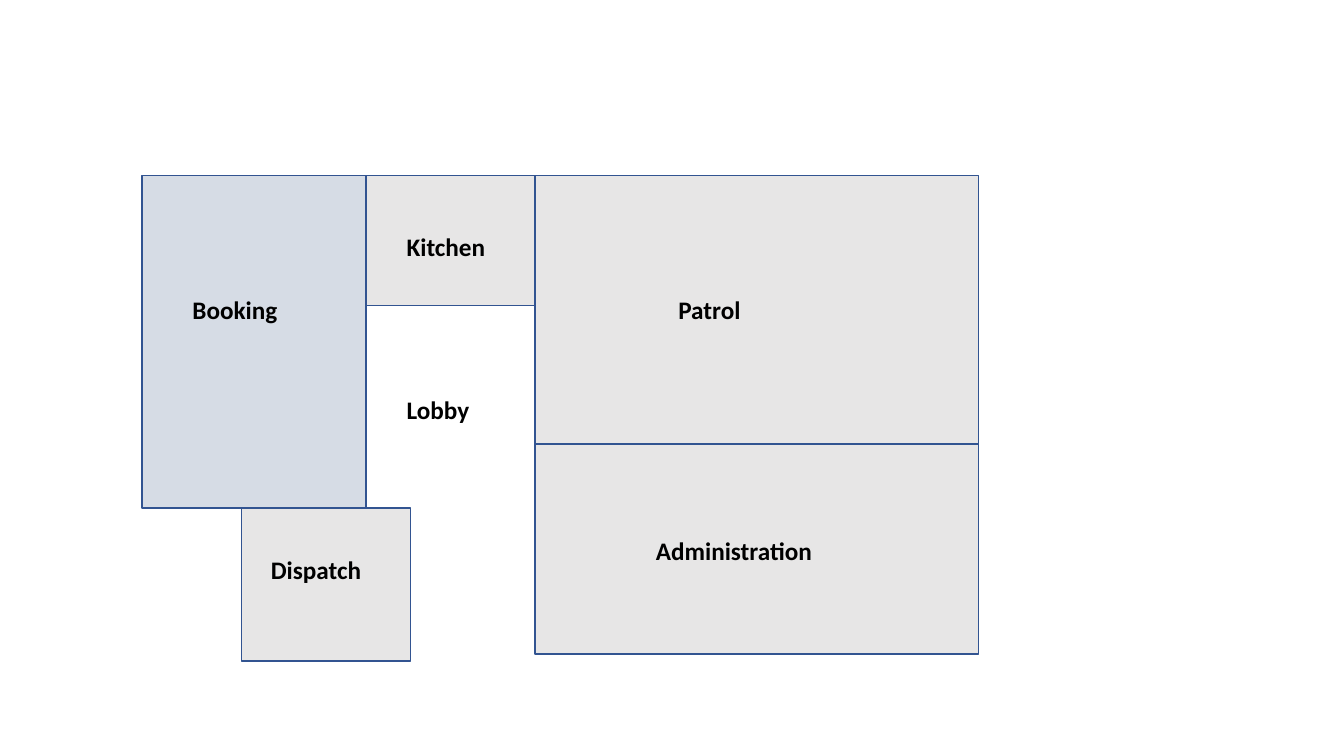
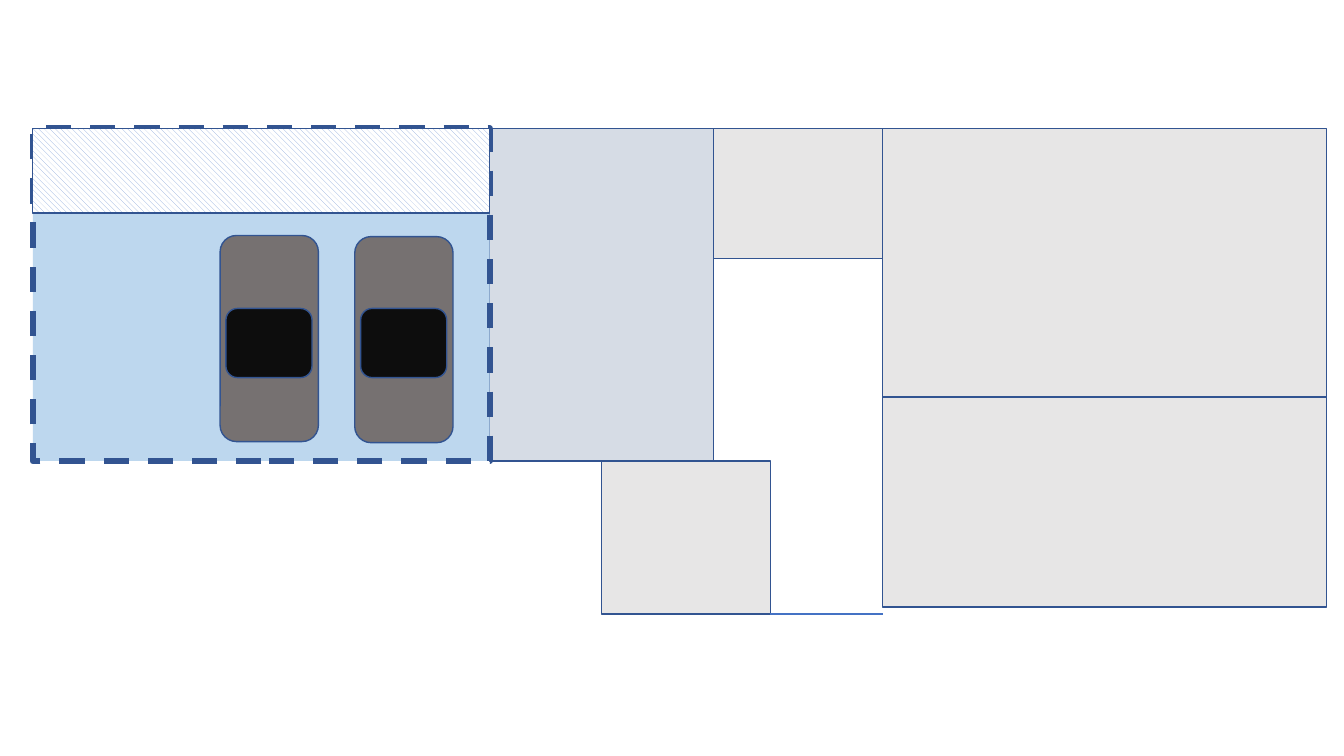
from dataclasses import dataclass

from lxml.etree import SubElement
from pptx import Presentation
from pptx.dml.color import RGBColor as RGB
from pptx.enum.dml import MSO_LINE as DASH, MSO_PATTERN as PATTERN
from pptx.enum.shapes import MSO_CONNECTOR as CONN, MSO_SHAPE as SHAPE
from pptx.enum.text import MSO_AUTO_SIZE as AUTO
from pptx.oxml.ns import qn
from pptx.util import Pt


@dataclass(frozen=True)
class Theme:
    """Colours, type and line widths shared by the slides."""

    room: RGB = RGB.from_string("E7E6E6")
    booking: RGB = RGB.from_string("D6DCE5")
    garage: RGB = RGB.from_string("BDD7EE")
    hatch: RGB = RGB.from_string("8FAADC")
    paper: RGB = RGB.from_string("FFFFFF")
    car: RGB = RGB.from_string("767171")
    roof: RGB = RGB.from_string("0D0D0D")
    outline: RGB = RGB.from_string("325491")
    wall: RGB = RGB.from_string("4472C4")
    text: RGB = RGB.from_string("000000")
    font: str = "Calibri"
    label_size: float = 18
    thin: float = 1
    medium: float = 1.5
    thick: float = 4.5


T = Theme()

BOOKING_W, BOOKING_H = 160, 237.5
HALL_W = 120.7
KITCHEN_H = 93
WING_X, WING_W = BOOKING_W + HALL_W, 317
PATROL_H, ADMIN_H = 191.7, 150
DISPATCH_H = 109.3
LABEL_H = 29
LABELS = [
    ("Dispatch", 85, 267, 97),
    ("Administration", 360, 253.5, 195),
    ("Patrol", 376, 81.5, 170),
    ("Booking", 29, 81.5, 119),
    ("Kitchen", 182, 36.5, 91),
    ("Lobby", 182, 152.5, 77),
]


def add_box(slide, x, y, w, h, color, kind=SHAPE.RECTANGLE):
    """Add a filled, outlined shape and return it."""
    sp = slide.shapes.add_shape(kind, Pt(x), Pt(y), Pt(w), Pt(h))
    sp.shadow.inherit = False
    sp.fill.solid()
    sp.fill.fore_color.rgb = color
    sp.line.color.rgb = T.outline
    sp.line.width = Pt(T.thin)
    return sp


def add_label(slide, text, x, y, w):
    """Add a bold room name."""
    tf = slide.shapes.add_textbox(Pt(x), Pt(y), Pt(w), Pt(LABEL_H)).text_frame
    tf.word_wrap = True
    tf.auto_size = AUTO.SHAPE_TO_FIT_TEXT
    tf.text = text
    font = tf.paragraphs[0].runs[0].font
    font.name = T.font
    font.size = Pt(T.label_size)
    font.bold = True
    font.color.rgb = T.text


def add_rooms(slide, x, y, dispatch_dx):
    """Draw the station rooms with their top left corner at x, y."""
    rooms = [
        (dispatch_dx, BOOKING_H, HALL_W, DISPATCH_H, T.room),
        (0, 0, BOOKING_W, BOOKING_H, T.booking),
        (BOOKING_W, 0, HALL_W, KITCHEN_H, T.room),
        (WING_X, 0, WING_W, PATROL_H, T.room),
        (WING_X, PATROL_H, WING_W, ADMIN_H, T.room),
    ]
    for dx, dy, w, h, color in rooms:
        add_box(slide, x + dx, y + dy, w, h, color)


def add_lobby_wall(slide, x, y, dispatch_dx):
    """Close the lobby between dispatch and the right wing."""
    wall_y = Pt(y + BOOKING_H + DISPATCH_H)
    cn = slide.shapes.add_connector(
        CONN.STRAIGHT, Pt(x + dispatch_dx + HALL_W), wall_y, Pt(x + WING_X), wall_y
    )
    cn.line.color.rgb = T.wall
    cn.line.width = Pt(T.medium)
    SubElement(cn._element.spPr, qn("a:effectLst"))


def add_car(slide, x, y, roof_dy):
    """Draw a car seen from above."""
    body_w, roof_w, roof_dx = 70.2, 61.5, 4.2
    add_box(slide, x, y, body_w, 147.2, T.car, SHAPE.ROUNDED_RECTANGLE)
    add_box(slide, x + roof_dx, y + roof_dy, roof_w, 49.4, T.roof,
            SHAPE.ROUNDED_RECTANGLE)


def add_garage(slide, x, y, w, h):
    """Draw the dashed garage with its hatched strip and two cars."""
    bay = add_box(slide, x, y, w, h, T.garage)
    bay.line.width = Pt(T.thick)
    bay.line.dash_style = DASH.DASH
    strip = add_box(slide, x, y, w, 60.5, T.paper)
    strip.fill.patterned()
    strip.fill.pattern = PATTERN.WIDE_DOWNWARD_DIAGONAL
    strip.fill.fore_color.rgb = T.hatch
    strip.fill.back_color.rgb = T.paper
    add_car(slide, x + 230, y + 77.2, 51.3)
    add_car(slide, x + 133.8, y + 76.4, 52.1)


def build_floor_plan(slide):
    """Build the labelled floor plan."""
    x, y = 101.4, 125.4
    add_rooms(slide, x, y, 71.2)
    for text, dx, dy, w in LABELS:
        add_label(slide, text, x + dx, y + dy, w)


def build_garage_plan(slide):
    """Build the floor plan extended by a garage."""
    x, y, w, dispatch_dx = 349.8, 91.8, 326.4, 79.8
    add_rooms(slide, x, y, dispatch_dx)
    add_garage(slide, x - w, y, w, BOOKING_H)
    add_lobby_wall(slide, x, y, dispatch_dx)


def main():
    """Build and save the presentation."""
    prs = Presentation()
    prs.slide_width, prs.slide_height = Pt(960), Pt(540)
    for build in (build_floor_plan, build_garage_plan):
        build(prs.slides.add_slide(prs.slide_layouts[6]))
    prs.save("out.pptx")


if __name__ == "__main__":
    main()
